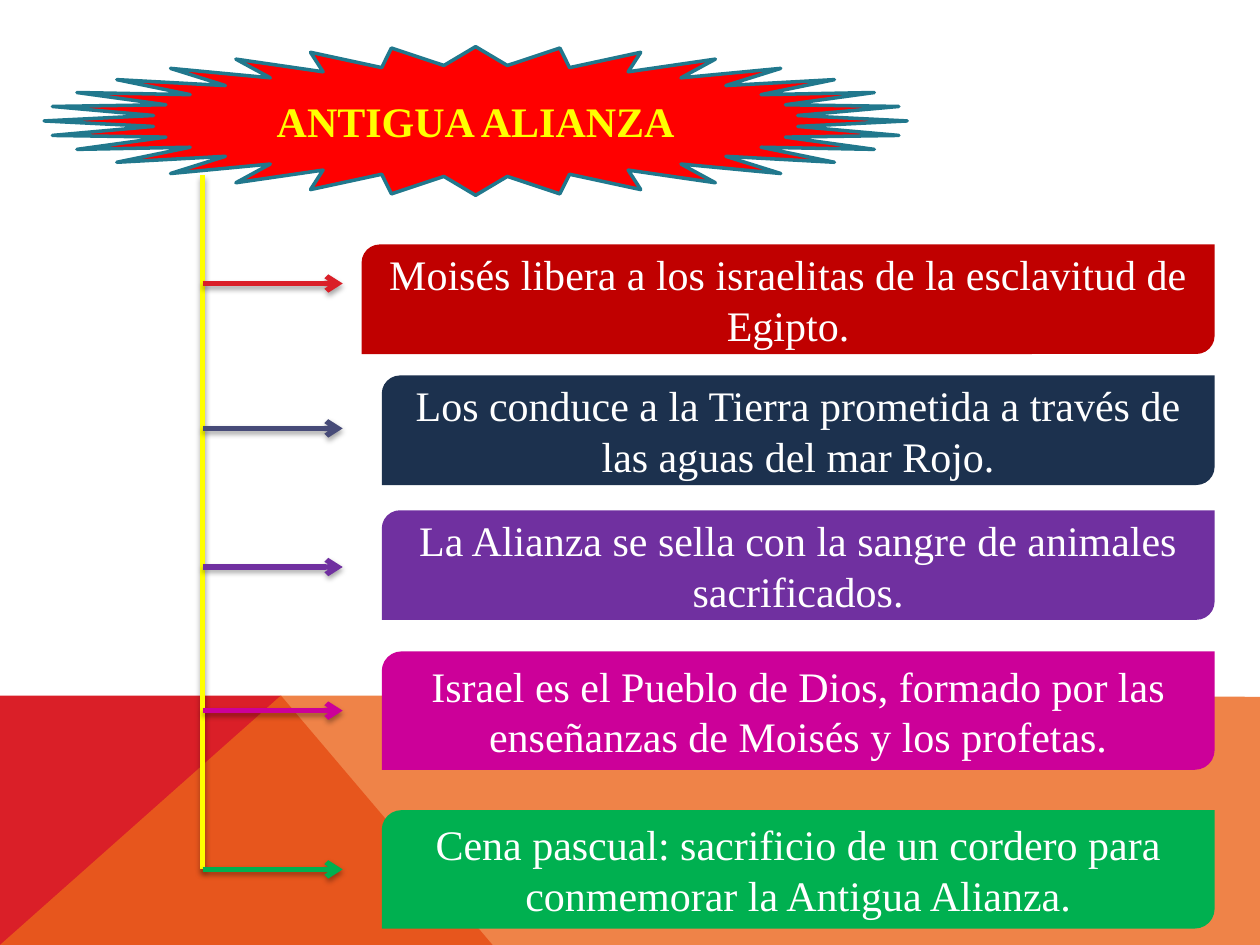
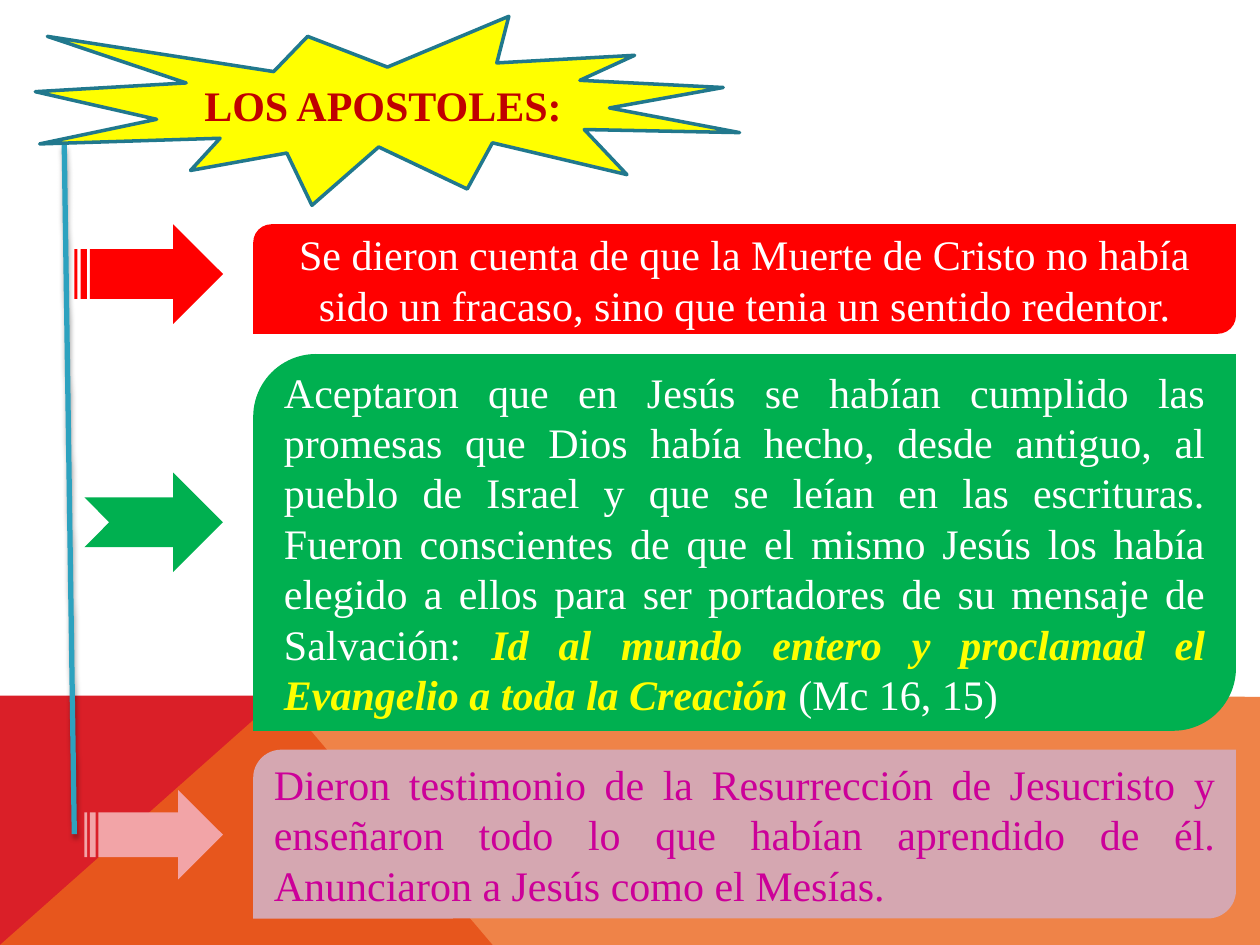
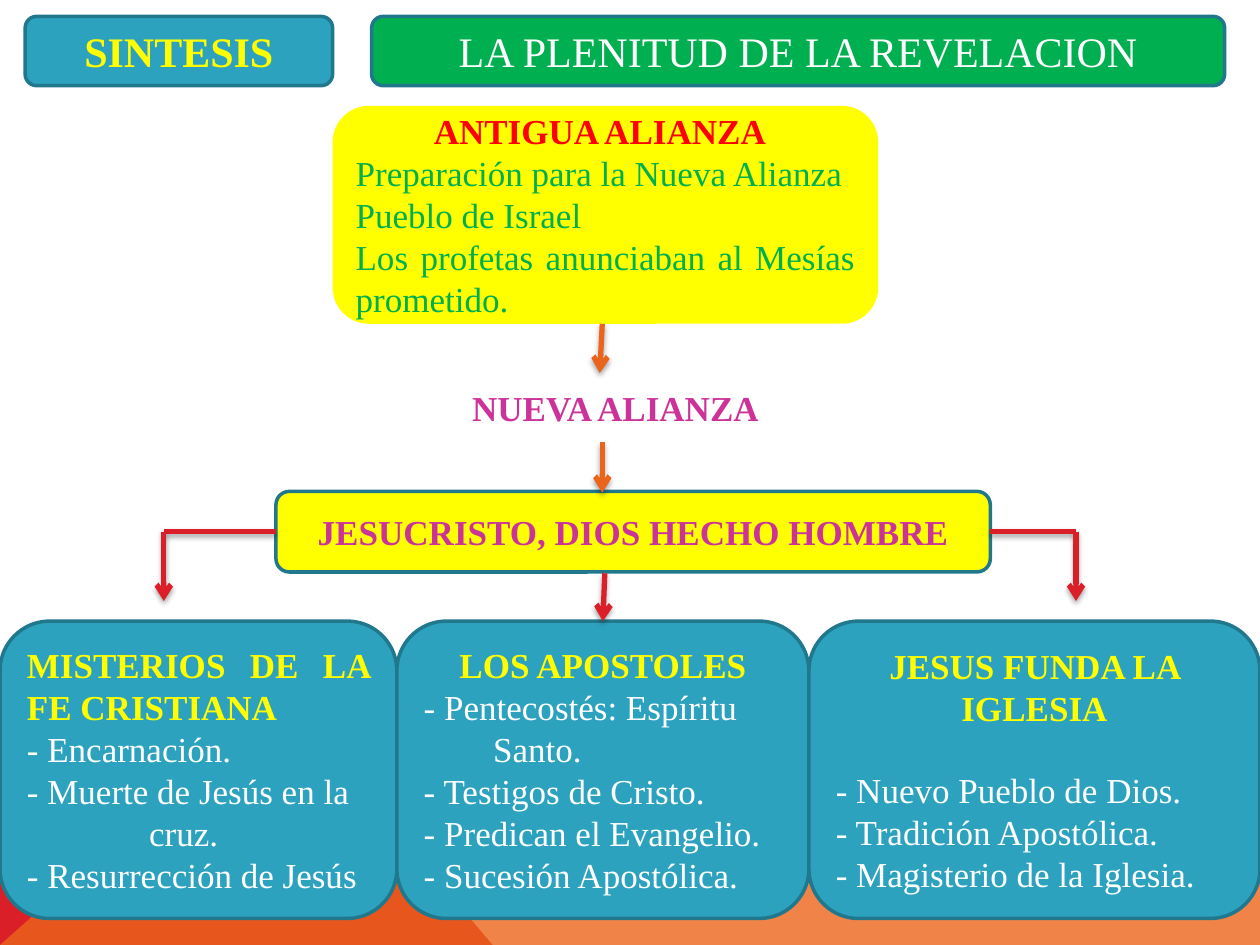
from lxml import etree
from pptx import Presentation
from pptx import util as u
from pptx.dml.color import RGBColor
from pptx.enum import shapes, text
from pptx.oxml import parse_xml
from pptx.oxml.ns import nsdecls, qn

rgb = RGBColor.from_string
kind = shapes.MSO_SHAPE
left, mid, just = text.PP_ALIGN.LEFT, text.PP_ALIGN.CENTER, text.PP_ALIGN.JUSTIFY

# Shared look
FACE = "Times New Roman"
WHITE, YELLOW, RED, GREEN = "FFFFFF", "FFFF00", "FF0000", "00B050"
TEAL, EDGE, CRIMSON, ORANGE = "2DA2BF", "21788D", "DA1F28", "EB641B"
PURPLE, PINK, ROSE, WINE = "7030A0", "CC0099", "CC3399", "C00000"
SHADOW = f"""<a:effectLst {nsdecls('a')}>
  <a:outerShdw blurRad="39000" dist="23000" dir="5400000" rotWithShape="0">
    <a:srgbClr val="000000"><a:alpha val="35000"/></a:srgbClr>
  </a:outerShdw></a:effectLst>"""


def box(slide, form, at, fill, edge=None, paras=(), size=24):
    """Add a shape; each paragraph is (words, colour, bold, align, hanging, first)."""
    shape = slide.shapes.add_shape(form, *[u.Inches(n) for n in at])
    shape.shadow.inherit = False
    if fill:
        shape.fill.solid()
        shape.fill.fore_color.rgb = rgb(fill)
    else:
        shape.fill.background()
    if edge:
        shape.line.color.rgb = rgb(edge)
        shape.line.width = u.Pt(2)
    else:
        shape.line.fill.background()
    frame = shape.text_frame
    frame.word_wrap = True
    for i, (words, hue, bold, align, hang, first) in enumerate(paras):
        para = frame.add_paragraph() if i else frame.paragraphs[0]
        para.text = words
        para.alignment = align
        font = para.font
        font.name, font.size, font.bold = FACE, u.Pt(size), bold
        font.color.rgb = rgb(hue)
        if hang:
            props = para._p.get_or_add_pPr()
            props.set("marL", str(u.Inches(hang)))
            props.set("indent", str(u.Inches(first - hang)))
    return shape


def join(slide, start, end, hue, arrow=True):
    """Add a shadowed straight line, with an arrowhead at its end if wanted."""
    line = slide.shapes.add_connector(
        shapes.MSO_CONNECTOR.STRAIGHT, *[u.Inches(n) for n in start + end])
    line.line.color.rgb = rgb(hue)
    line.line.width = u.Pt(3)
    props = line.element.spPr
    if arrow:
        etree.SubElement(props.find(qn("a:ln")), qn("a:tailEnd"), type="arrow")
    props.append(parse_xml(SHADOW))
    return line


deck = Presentation()
deck.slide_width, deck.slide_height = u.Inches(10), u.Inches(7.5)
pages = [deck.slides.add_slide(deck.slide_layouts[6]) for _ in range(3)]
old, men, sum_up = pages

# Bands at the foot, moved to the master
bands = [
    (CRIMSON, [(0, 7.5), (0, 5.52), (2.23, 5.52), (3.91, 7.5)]),
    (ORANGE, [(0, 7.5), (2.23, 5.52), (10, 5.53), (10, 7.5)]),
]
tree = deck.slide_master.shapes.element
for i, (hue, spots) in enumerate(bands):
    spots = [(u.Inches(x), u.Inches(y)) for x, y in spots]
    pen = old.shapes.build_freeform(*spots[0])
    pen.add_line_segments(spots[1:], close=True)
    band = pen.convert_to_shape()
    band.shadow.inherit = False
    band.fill.solid()
    band.fill.fore_color.rgb = rgb(hue)
    band.line.fill.background()
    band.element.nvSpPr.cNvPr.set("id", str(20 + i))
    if hue == ORANGE:
        tint = band.element.spPr.find(qn("a:solidFill"))[0]
        etree.SubElement(tint, qn("a:alpha"), val="80000")
    tree.insert(2 + i, band.element)

# Slide 1: the old covenant
box(old, kind.STAR_32_POINT, (0.35, 0.37, 6.85, 1.18), RED, EDGE,
    [("ANTIGUA ALIANZA", YELLOW, True, mid, 0, 0)])
steps = [
    (2.87, 1.94, 0.87, 2.25, WINE, CRIMSON,
     "Moisés libera a los israelitas de la esclavitud de Egipto."),
    (3.03, 2.98, 0.87, 3.4, "1C314E", "474B78",
     "Los conduce a la Tierra prometida a través de las aguas del mar Rojo."),
    (3.03, 4.05, 0.87, 4.5, PURPLE, PURPLE,
     "La Alianza se sella con la sangre de animales sacrificados."),
    (3.03, 5.17, 0.94, 5.64, PINK, PINK,
     "Israel es el Pueblo de Dios, formado por las enseñanzas de Moisés y los profetas."),
    (3.03, 6.43, 0.94, 6.9, GREEN, GREEN,
     "Cena pascual: sacrificio de un cordero para conmemorar la Antigua Alianza."),
]
join(old, (1.61, 1.39), (1.61, 6.9), YELLOW, arrow=False)
for x, y, high, level, fill, hue, words in steps:
    box(old, kind.ROUND_2_DIAG_RECTANGLE, (x, y, 9.64 - x, high), fill,
        paras=[(words, WHITE, False, mid, 0, 0)])
    join(old, (1.61, level), (2.72, level), hue)

# Slide 2: the apostles
box(men, kind.EXPLOSION1, (0.28, 0.13, 5.59, 1.5), YELLOW, EDGE,
    [("LOS APOSTOLES:", WINE, True, mid, 0, 0)])
join(men, (0.51, 1.15), (0.59, 6.62), TEAL, arrow=False)
deeds = [
    (1.78, 0.87, RED, WHITE, mid,
     "Se dieron cuenta de que la Muerte de Cristo no había sido un fracaso, "
     "sino que tenia un sentido redentor.",
     kind.STRIPED_RIGHT_ARROW, (0.59, 1.78, 1.18, 0.79), RED),
    (2.81, 2.99, GREEN, WHITE, just,
     "Aceptaron que en Jesús se habían cumplido las promesas que Dios había hecho, "
     "desde antiguo, al pueblo de Israel y que se leían en las escrituras. Fueron "
     "conscientes de que el mismo Jesús los había elegido a ellos para ser portadores "
     "de su mensaje de Salvación: ",
     kind.NOTCHED_RIGHT_ARROW, (0.67, 3.75, 1.1, 0.79), GREEN),
    (5.95, 1.34, "D5A7B1", PINK, just,
     "Dieron testimonio de la Resurrección de Jesucristo y enseñaron todo lo que "
     "habían aprendido de él. Anunciaron a Jesús como el Mesías.",
     kind.STRIPED_RIGHT_ARROW, (0.67, 6.27, 1.1, 0.71), "F2A4A7"),
]
cards = []
for y, high, fill, hue, align, words, form, at, tone in deeds:
    cards.append(box(men, kind.ROUND_2_DIAG_RECTANGLE, (2.01, y, 7.8, high), fill,
                     paras=[(words, hue, False, align, 0, 0)]))
    box(men, form, at, tone)

# Quotation and its reference
para = cards[1].text_frame.paragraphs[0]
quote = para.add_run()
quote.text = "Id al mundo entero y proclamad el Evangelio a toda la Creación "
quote.font.bold = quote.font.italic = True
quote.font.color.rgb = rgb(YELLOW)
para.add_run().text = "(Mc 16, 15)"

# Slide 3: summary, upper part
round_ = kind.ROUNDED_RECTANGLE
box(sum_up, round_, (0.2, 0.13, 2.44, 0.55), TEAL, EDGE,
    [("SINTESIS", YELLOW, True, mid, 0, 0)])
box(sum_up, round_, (2.95, 0.13, 6.77, 0.55), GREEN, EDGE,
    [("LA PLENITUD DE LA REVELACION", WHITE, False, mid, 0, 0)])
box(sum_up, round_, (2.64, 0.84, 4.33, 1.73), YELLOW, None, [
    ("ANTIGUA ALIANZA", RED, True, left, 0.62, 0.62),
    ("Preparación para la Nueva Alianza", GREEN, False, just, 0, 0),
    ("Pueblo de Israel", GREEN, False, just, 0, 0),
    ("Los profetas anunciaban al Mesías prometido.", GREEN, False, just, 0, 0),
], 20)
box(sum_up, round_, (3.35, 2.96, 3.07, 0.55), None, None,
    [("NUEVA ALIANZA", ROSE, True, mid, 0, 0)], 20)
christ = box(sum_up, round_, (2.19, 3.9, 5.67, 0.64), YELLOW, EDGE,
             [("JESUCRISTO, DIOS HECHO HOMBRE", ROSE, True, mid, 0, 0)], 20)

# Three columns: left, width, title, title alignment, items with hanging indent
cols = [
    (0, 3.15, "MISTERIOS DE LA FE CRISTIANA", just,
     [("- Encarnación.", 0), ("- Muerte de Jesús en la cruz.", 0.97),
      ("- Resurrección de Jesús", 0)]),
    (3.15, 3.27, "LOS APOSTOLES", mid,
     [("- Pentecostés: Espíritu Santo.", 0.55), ("- Testigos de Cristo.", 0),
      ("- Predican el Evangelio.", 0), ("- Sucesión Apostólica.", 0)]),
    (6.42, 3.58, "JESUS FUNDA LA IGLESIA", mid,
     [("- Nuevo Pueblo de Dios.", 0), ("- Tradición Apostólica.", 0),
      ("- Magisterio de la Iglesia.", 0)]),
]
ends = []
for x, wide, title, align, items in cols:
    paras = [(title, YELLOW, True, align, 0, 0)]
    paras += [(words, WHITE, False, left, hang, 0) for words, hang in items]
    ends.append(box(sum_up, round_, (x, 4.93, wide, 2.36), TEAL, EDGE, paras, 20))
ends[2].text_frame.paragraphs[0].space_after = u.Pt(23)

# Arrows down the middle and out to the sides
join(sum_up, (4.78, 2.57), (4.76, 2.96), ORANGE)
join(sum_up, (4.78, 3.51), (4.78, 3.91), ORANGE)
for side, x, turn in [(1, 2.19, 1.3), (3, 7.86, 8.54)]:
    join(sum_up, (x, 4.22), (turn, 4.22), CRIMSON, arrow=False).begin_connect(christ, side)
    join(sum_up, (turn, 4.22), (turn, 4.77), CRIMSON)
join(sum_up, (4.8, 4.55), (4.78, 4.93), CRIMSON).end_connect(ends[1], 0)

deck.save("out.pptx")
